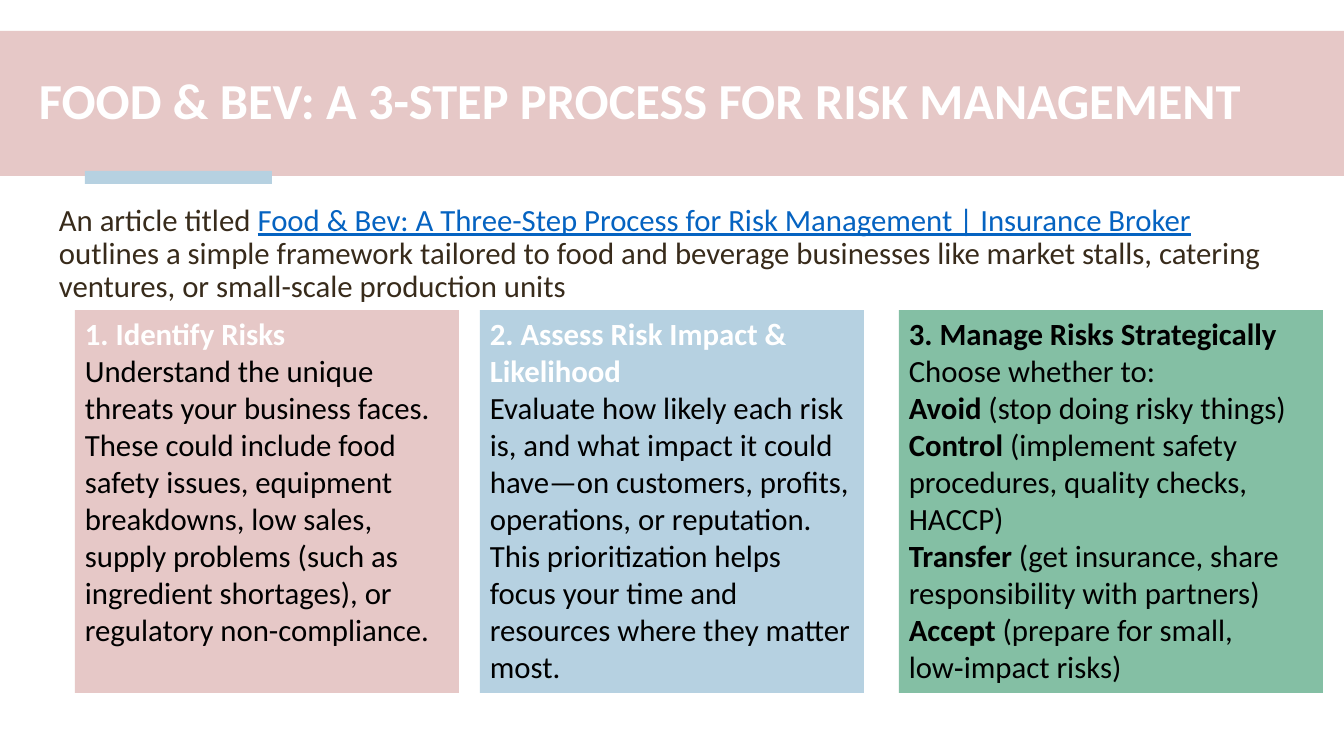
from pptx import Presentation
from pptx.dml.color import RGBColor
from pptx.enum.shapes import MSO_SHAPE as Shape
from pptx.enum.text import MSO_ANCHOR as Anchor, PP_ALIGN as Align
from pptx.util import Pt

# Content: each paragraph is a list of (text, colour, bold) runs
WHITE, BLACK, BROWN, LINK = "FFFFFF", "000000", "382B1B", "0563C1"
PINK, BLUE, GREEN = "E6C8C7", "B6D1E1", "84BFA4"

TITLE = [[("FOOD & BEV: A 3-STEP PROCESS FOR RISK MANAGEMENT", WHITE, True)]]
INTRO = [[
    ("An article titled ", BROWN, False),
    ("Food & Bev: A Three-Step Process for Risk Management | Insurance Broker", LINK, False),
    (" outlines a simple framework tailored to food and beverage businesses like "
     "market stalls, catering ventures, or small-scale production units", BROWN, False),
]]
IDENTIFY = [
    [("1. Identify Risks", WHITE, True)],
    [("Understand the unique threats your business faces. These could include food "
      "safety issues, equipment breakdowns, low sales, supply problems (such as "
      "ingredient shortages), or regulatory non-compliance.", BLACK, False)],
]
ASSESS = [
    [("2. Assess Risk Impact & Likelihood", WHITE, True)],
    [("Evaluate how likely each risk is, and what impact it could have—on customers, "
      "profits, operations, or reputation. This prioritization helps focus your time "
      "and resources where they matter most.", BLACK, False)],
]
OPTIONS = [
    ("Avoid", "(stop doing risky things)"),
    ("Control", "(implement safety procedures, quality checks, HACCP)"),
    ("Transfer", "(get insurance, share responsibility with partners)"),
    ("Accept", "(prepare for small, low‑impact risks)"),
]
MANAGE = [
    [("3. Manage Risks Strategically", BLACK, True)],
    [("Choose whether to:", BLACK, False)],
] + [[(name, BLACK, True), (" " + detail, BLACK, False)] for name, detail in OPTIONS]

# Cards: left, width, fill, paragraphs
CARD_TOP, CARD_HEIGHT = 310, 383
CARDS = [
    (75, 384, PINK, IDENTIFY),
    (480, 384, BLUE, ASSESS),
    (899, 424, GREEN, MANAGE),
]

WIDTH, HEIGHT = 1344, 756
SCALE = 12192000 / WIDTH


def px(*lengths):
    return [round(length * SCALE) for length in lengths]


def color(hex_string):
    return RGBColor.from_string(hex_string)


def add_block(slide, box, fill):
    shape = slide.shapes.add_shape(Shape.RECTANGLE, *px(*box))
    shape.shadow.inherit = False
    shape.fill.solid()
    shape.fill.fore_color.rgb = color(fill)
    shape.line.fill.background()
    return shape


def write(shape, paragraphs, size=22, anchor=Anchor.TOP, spacing=None, before=0):
    frame = shape.text_frame
    frame.word_wrap = True
    frame.vertical_anchor = anchor
    for index, runs in enumerate(paragraphs):
        paragraph = frame.add_paragraph() if index else frame.paragraphs[0]
        paragraph.alignment = Align.LEFT
        paragraph.line_spacing = spacing
        paragraph.space_before = Pt(before)
        for text, ink, bold in runs:
            run = paragraph.add_run()
            run.text = text
            run.font.name = "Calibri"
            run.font.size = Pt(size)
            run.font.bold = bold
            run.font.underline = ink == LINK
            run.font.color.rgb = color(ink)


def main():
    presentation = Presentation()
    presentation.slide_width, presentation.slide_height = px(WIDTH, HEIGHT)
    slide = presentation.slides.add_slide(presentation.slide_layouts[6])

    # Title band and accent bar
    add_block(slide, (0, 31, WIDTH, 145), PINK)
    add_block(slide, (85, 171, 187, 13), BLUE)
    title = slide.shapes.add_textbox(*px(29, 41, 1369, 124))
    write(title, TITLE, size=36, anchor=Anchor.MIDDLE, spacing=0.9, before=10)

    # Introduction
    intro = slide.shapes.add_textbox(*px(49, 200, 1224, 515))
    write(intro, INTRO, spacing=Pt(23.4))

    # Step cards
    for left, width, fill, paragraphs in CARDS:
        card = add_block(slide, (left, CARD_TOP, width, CARD_HEIGHT), fill)
        write(card, paragraphs)

    presentation.save("out.pptx")


if __name__ == "__main__":
    main()
